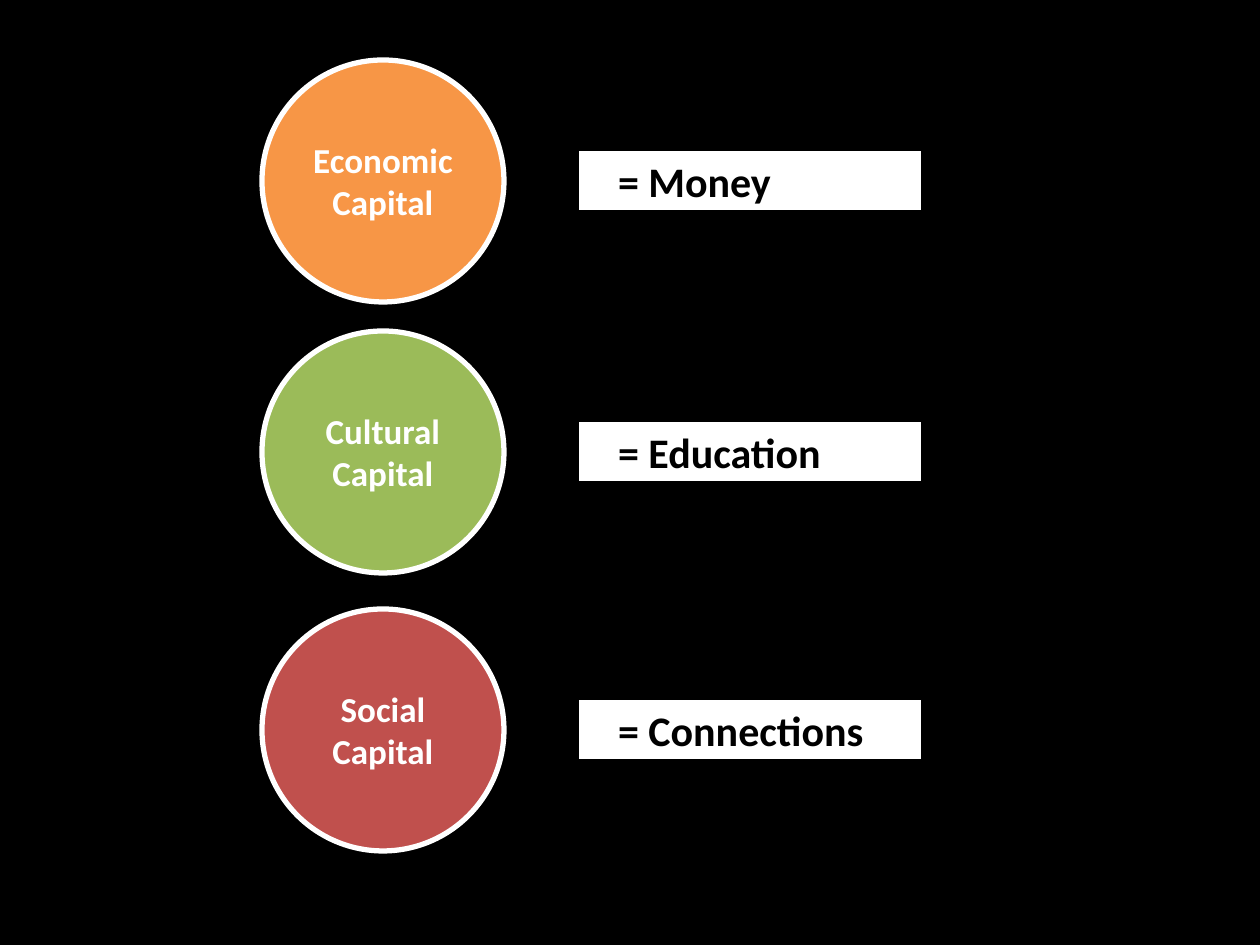
from pptx import Presentation
from pptx.dml.color import RGBColor
from pptx.enum.shapes import MSO_SHAPE as Shape
from pptx.enum.text import MSO_ANCHOR as Anchor, MSO_AUTO_SIZE as AutoSize, PP_ALIGN as Align
from pptx.util import Pt

EMU_PER_PX = 914400 / 126
COLORS = {
    "black": "000000",
    "white": "FFFFFF",
    "orange": "F79646",
    "green": "9BBB59",
    "red": "C0504D",
}
CAPITALS = [
    ("Economic Capital", "= Money", "orange", 60),
    ("Cultural Capital", "= Education", "green", 331),
    ("Social Capital", "= Connections", "red", 609),
]
CIRCLE_LEFT, CIRCLE_SIZE = 262, 242
BOX_LEFT, BOX_WIDTH, BOX_HEIGHT = 577, 346, 63


def px(length):
    return round(length * EMU_PER_PX)


def color(name):
    return RGBColor.from_string(COLORS[name])


def set_attributes(target, values):
    for name, value in values.items():
        setattr(target, name, value)


def add_text_shape(slide, kind, bounds, fill, line, line_width, text, font, align, frame_format):
    shape = slide.shapes.add_shape(kind, *map(px, bounds))
    shape.shadow.inherit = False
    shape.fill.solid()
    shape.fill.fore_color.rgb = color(fill)
    shape.line.color.rgb = color(line)
    shape.line.width = Pt(line_width)
    frame = shape.text_frame
    set_attributes(frame, {"word_wrap": True, **frame_format})
    paragraph = frame.paragraphs[0]
    paragraph.alignment = align
    run = paragraph.add_run()
    run.text = text
    size, font_color = font
    set_attributes(run.font, {"name": "Calibri", "size": Pt(size), "bold": True})
    run.font.color.rgb = color(font_color)


def add_circle(slide, text, fill, top):
    bounds = (CIRCLE_LEFT, top, CIRCLE_SIZE, CIRCLE_SIZE)
    add_text_shape(slide, Shape.OVAL, bounds, fill, "white", 3, text,
                   (20, "white"), Align.CENTER, {"vertical_anchor": Anchor.MIDDLE})


def add_meaning(slide, text, circle_top):
    top = circle_top + (CIRCLE_SIZE - BOX_HEIGHT) // 2
    bounds = (BOX_LEFT, top, BOX_WIDTH, BOX_HEIGHT)
    frame_format = {
        "vertical_anchor": Anchor.TOP,
        "auto_size": AutoSize.SHAPE_TO_FIT_TEXT,
        "margin_left": px(41),
    }
    add_text_shape(slide, Shape.RECTANGLE, bounds, "white", "black", 2, text,
                   (24, "black"), Align.LEFT, frame_format)


def main():
    presentation = Presentation()
    set_attributes(presentation, {"slide_width": px(1260), "slide_height": px(945)})
    slide = presentation.slides.add_slide(presentation.slide_layouts[6])
    slide.background.fill.solid()
    slide.background.fill.fore_color.rgb = color("black")
    for capital, meaning, fill, top in CAPITALS:
        add_circle(slide, capital, fill, top)
        add_meaning(slide, meaning, top)
    presentation.save("out.pptx")


if __name__ == "__main__":
    main()
